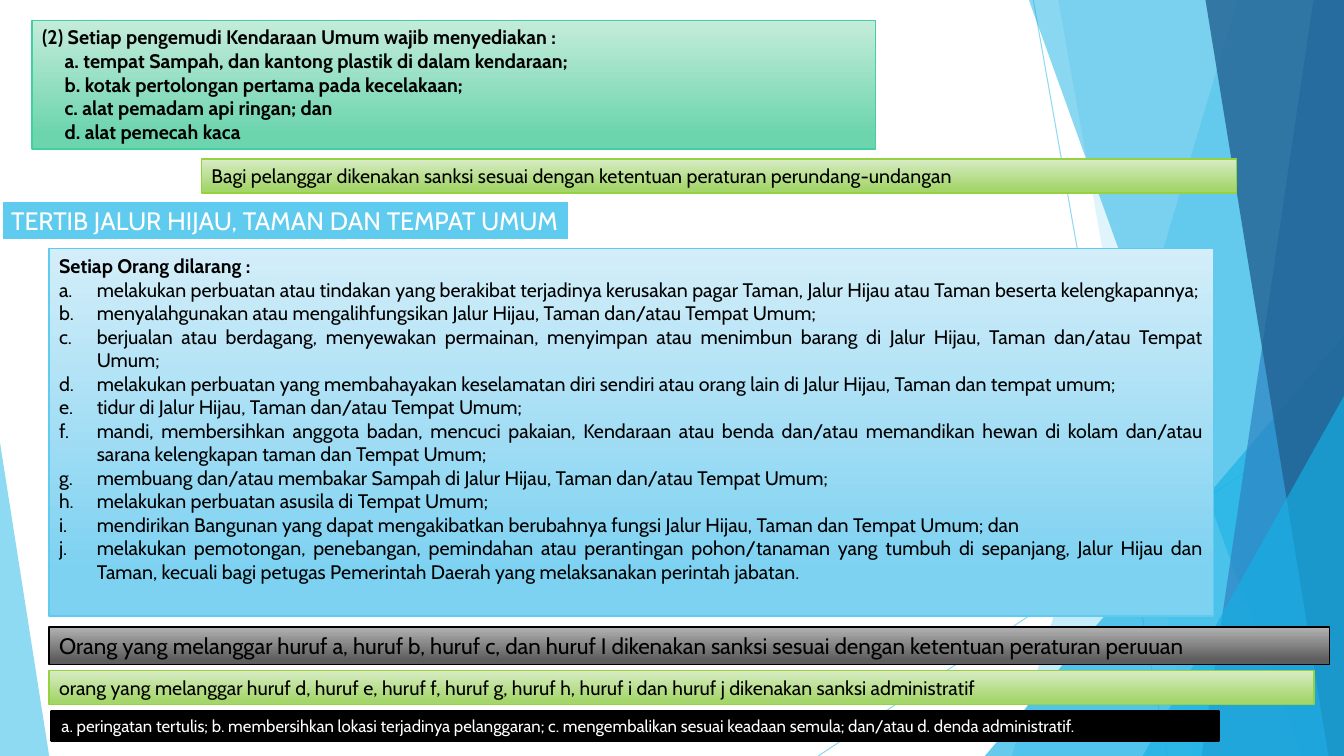
from lxml import etree
from pptx import Presentation
from pptx.dml.color import RGBColor
from pptx.enum.shapes import MSO_CONNECTOR, MSO_SHAPE
from pptx.enum.text import MSO_ANCHOR, MSO_AUTO_SIZE, PP_ALIGN
from pptx.oxml.ns import qn
from pptx.util import Cm, Pt

RECT = MSO_SHAPE.RECTANGLE
TRIANGLE = MSO_SHAPE.ISOSCELES_TRIANGLE
STRAIGHT = MSO_CONNECTOR.STRAIGHT
TOP = MSO_ANCHOR.TOP
FIXED = MSO_AUTO_SIZE.NONE
LEFT = PP_ALIGN.LEFT
JUSTIFY = PP_ALIGN.JUSTIFY

WHITE = RGBColor(0xFF, 0xFF, 0xFF)
BLACK = RGBColor(0x00, 0x00, 0x00)
SKY = RGBColor(0x5F, 0xCB, 0xEF)
CYAN = RGBColor(0x17, 0xB0, 0xE4)
BLUE = RGBColor(0x2E, 0x83, 0xC3)
NAVY = RGBColor(0x22, 0x62, 0x92)

# Box looks: gradient top, gradient bottom, outline
MINT = (RGBColor(0xC5, 0xEC, 0xDB), RGBColor(0x6D, 0xD5, 0xAE),
        RGBColor(0x42, 0xD0, 0xA2))
LIME = (RGBColor(0xD8, 0xEC, 0xC5), RGBColor(0xA5, 0xD6, 0x6C),
        RGBColor(0x96, 0xD1, 0x41))
AQUA = (RGBColor(0xD4, 0xEE, 0xF9), RGBColor(0x7D, 0xD1, 0xF1), SKY)
GREY = (RGBColor(0xB2, 0xB2, 0xB2), RGBColor(0x5E, 0x5E, 0x5E), BLACK)

WIDE, HIGH = 33.87, 19.05

DUTIES = [
    "a. tempat Sampah, dan kantong plastik di dalam kendaraan;",
    "b. kotak pertolongan pertama pada kecelakaan;",
    "c. alat pemadam api ringan; dan",
    "d. alat pemecah kaca",
]
BANS = [
    "melakukan perbuatan atau tindakan yang berakibat terjadinya kerusakan "
    "pagar Taman, Jalur Hijau atau Taman beserta kelengkapannya;",
    "menyalahgunakan atau mengalihfungsikan Jalur Hijau, Taman dan/atau Tempat Umum;",
    "berjualan atau berdagang, menyewakan permainan, menyimpan atau menimbun "
    "barang di Jalur Hijau, Taman dan/atau Tempat Umum;",
    "melakukan perbuatan yang membahayakan keselamatan diri sendiri atau orang "
    "lain di Jalur Hijau, Taman dan tempat umum;",
    "tidur di Jalur Hijau, Taman dan/atau Tempat Umum;",
    "mandi, membersihkan anggota badan, mencuci pakaian, Kendaraan atau benda "
    "dan/atau memandikan hewan di kolam dan/atau sarana kelengkapan taman dan "
    "Tempat Umum;",
    "membuang dan/atau membakar Sampah di Jalur Hijau, Taman dan/atau Tempat Umum;",
    "melakukan perbuatan asusila di Tempat Umum;",
    "mendirikan Bangunan yang dapat mengakibatkan berubahnya fungsi Jalur Hijau, "
    "Taman dan Tempat Umum; dan",
    "melakukan pemotongan, penebangan, pemindahan atau perantingan pohon/tanaman "
    "yang tumbuh di sepanjang, Jalur Hijau dan Taman, kecuali bagi petugas "
    "Pemerintah Daerah yang melaksanakan perintah jabatan.",
]


class Deck:
    """Holds the text style and the current slide."""

    font = "Cabin"

    def __init__(self, slide):
        self.slide = slide
        self.shapes = slide.shapes

    def fade(self, shape, alpha):
        for color in shape.element.iter(qn("a:srgbClr")):
            etree.SubElement(color, qn("a:alpha")).set("val", str(alpha * 1000))

    def tint(self, shape, color, alpha):
        shape.shadow.inherit = False
        shape.fill.solid()
        shape.fill.fore_color.rgb = color
        shape.line.fill.background()
        self.fade(shape, alpha)

    def ray(self, x1, y1, x2, y2):
        line = self.shapes.add_connector(STRAIGHT, Cm(x1), Cm(y1), Cm(x2), Cm(y2))
        line.line.color.rgb = SKY
        line.line.width = Pt(0.75)
        self.fade(line, 70)
        etree.SubElement(line.element.spPr, qn("a:effectLst"))

    def band(self, top, foot, color, alpha):
        """Slanted band that reaches the right edge of the slide."""
        edge = self.shapes.build_freeform(Cm(top), 0)
        edge.add_line_segments([(Cm(WIDE), 0), (Cm(WIDE), Cm(HIGH)),
                                (Cm(foot), Cm(HIGH))])
        self.tint(edge.convert_to_shape(), color, alpha)

    def wedge(self, x, y, width, apex, color, alpha):
        """Triangle that stands on the bottom edge of the slide."""
        shape = self.shapes.add_shape(TRIANGLE, Cm(x), Cm(y), Cm(width), Cm(HIGH - y))
        shape.adjustments[0] = apex
        self.tint(shape, color, alpha)

    def frame(self, shape, wrap=True):
        text = shape.text_frame
        text.word_wrap = wrap
        text.auto_size = FIXED
        text.vertical_anchor = TOP
        text.margin_left = text.margin_right = Cm(0.25)
        text.margin_top = text.margin_bottom = Cm(0.13)

    def say(self, shape, words, size=14, color=BLACK, bold=False,
            align=LEFT, indent=0, number=False):
        text = shape.text_frame
        para = text.paragraphs[0]
        if para.runs:
            para = text.add_paragraph()
        para.alignment = align
        props = para._p.get_or_add_pPr()
        props.set("marL", str(Cm(indent)))
        if number:
            props.set("indent", str(-Cm(indent)))
            etree.SubElement(props, qn("a:buAutoNum")).set("type", "alphaLcPeriod")
        run = para.add_run()
        run.text = words
        run.font.name = self.font
        run.font.size = Pt(size)
        run.font.bold = bold
        run.font.color.rgb = color

    def box(self, x, y, width, height, look):
        shape = self.shapes.add_shape(RECT, Cm(x), Cm(y), Cm(width), Cm(height))
        shape.shadow.inherit = False
        first, last, edge = look
        shape.fill.gradient()
        shape.fill.gradient_angle = 270
        for stop, color, place in zip(shape.fill.gradient_stops, (first, last), (0, 0.88)):
            stop.color.rgb = color
            stop.position = place
        shape.line.color.rgb = edge
        shape.line.width = Pt(1)
        self.frame(shape)
        return shape

    def title(self, words, x, y, width, height):
        shape = self.shapes.title
        shape.left, shape.top = Cm(x), Cm(y)
        shape.width, shape.height = Cm(width), Cm(height)
        shape.fill.solid()
        shape.fill.fore_color.rgb = SKY
        shape.line.color.rgb = WHITE
        shape.line.width = Pt(2)
        self.frame(shape, wrap=False)
        self.say(shape, words, size=18, color=WHITE)


def main():
    show = Presentation()
    show.slide_width, show.slide_height = Cm(WIDE), Cm(HIGH)
    deck = Deck(show.slides.add_slide(show.slide_layouts[5]))

    # Backdrop
    deck.ray(26.04, 0, 29.41, HIGH)
    deck.ray(WIDE, 10.24, 20.62, HIGH)
    deck.band(31.19, 25.5, SKY, 36)
    deck.band(26.67, 30.05, SKY, 20)
    deck.wedge(24.82, 8.46, 9.05, 1, CYAN, 66)
    deck.band(25.93, 32.79, CYAN, 50)
    deck.band(33.1, 30.28, BLUE, 70)
    deck.band(30.38, 33.48, NAVY, 80)
    deck.wedge(28.8, 9.98, 5.07, 1, CYAN, 66)
    deck.wedge(0, 11.15, 1.24, 0, SKY, 70)

    # Duties of drivers
    duty = deck.box(0.81, 0.51, 21.26, 3.25, MINT)
    deck.say(duty, "(2) Setiap pengemudi Kendaraan Umum wajib menyediakan :", bold=True)
    for words in DUTIES:
        deck.say(duty, words, bold=True, indent=0.57)
    rule = deck.box(5.08, 4.01, 26.09, 0.86, LIME)
    deck.say(rule, "Bagi pelanggar dikenakan sanksi sesuai dengan ketentuan "
                   "peraturan perundang-undangan")

    # Title and bans
    deck.title("TERTIB JALUR HIJAU, TAMAN DAN TEMPAT UMUM", 0.03, 5.05, 14.33, 1.02)
    ban = deck.box(1.24, 6.27, 29.34, 9.25, AQUA)
    deck.say(ban, "Setiap Orang dilarang :", bold=True, align=JUSTIFY)
    for words in BANS:
        deck.say(ban, words, align=JUSTIFY, indent=0.95, number=True)

    # Sanctions
    court = deck.box(1.24, 15.8, 32.26, 0.94, GREY)
    deck.say(court, "Orang yang melanggar huruf a, huruf b, huruf c, dan huruf I "
                    "dikenakan sanksi sesuai dengan ketentuan peraturan peruuan", size=16)
    fine = deck.box(1.24, 16.89, 31.88, 0.86, LIME)
    deck.say(fine, "orang yang melanggar huruf d, huruf e, huruf f, huruf g, huruf h, "
                   "huruf i dan huruf j dikenakan sanksi administratif")
    steps = deck.box(1.3, 17.91, 29.41, 0.76, (BLACK, BLACK, BLACK))
    steps.fill.solid()
    steps.fill.fore_color.rgb = BLACK
    steps.line.width = Pt(1.5)
    deck.say(steps, "a. peringatan tertulis; b. membersihkan lokasi terjadinya "
                    "pelanggaran; c. mengembalikan sesuai keadaan semula; dan/atau "
                    "d. denda administratif.", size=12, color=WHITE)

    show.save("out.pptx")


if __name__ == "__main__":
    main()
